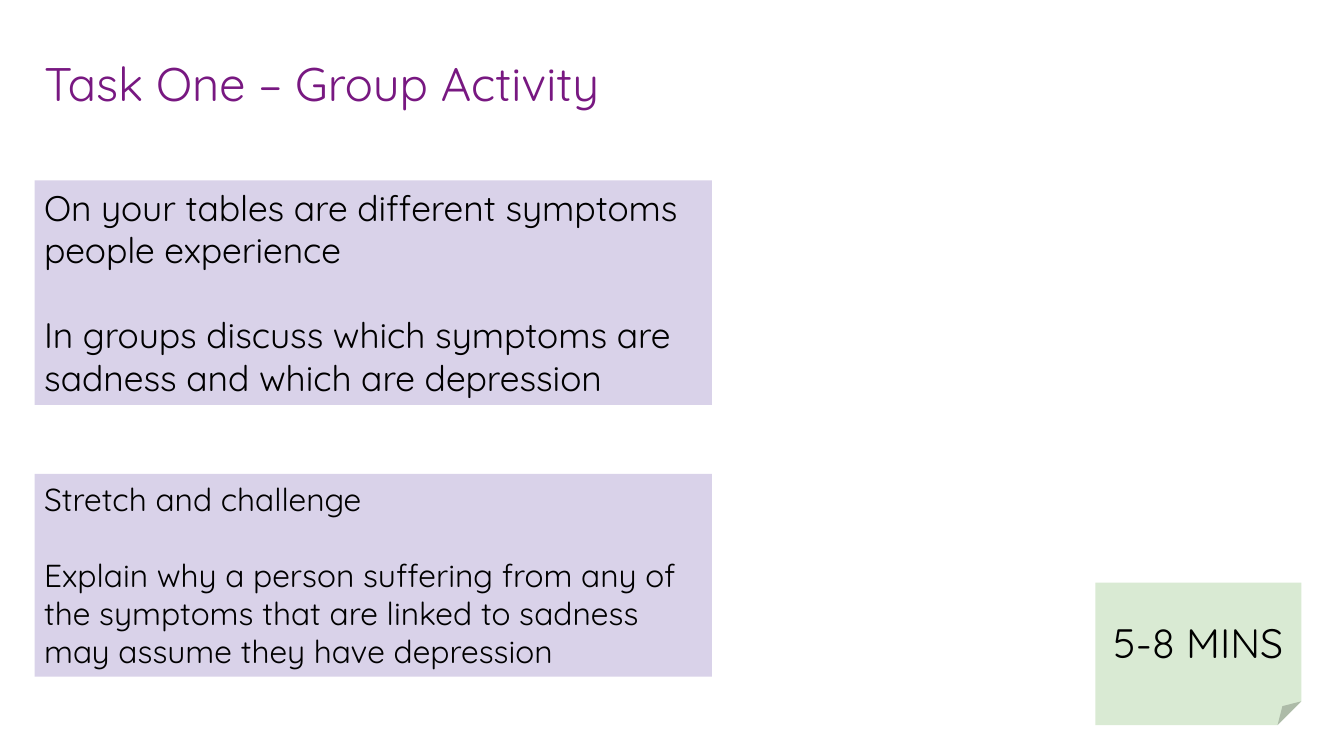
from dataclasses import dataclass

from pptx import Presentation
from pptx.dml.color import RGBColor
from pptx.enum.shapes import MSO_SHAPE
from pptx.enum.text import MSO_ANCHOR, PP_ALIGN
from pptx.shapes.autoshape import Shape
from pptx.slide import Slide
from pptx.util import Inches, Pt

RECTANGLE = MSO_SHAPE.RECTANGLE
FOLDED_CORNER = MSO_SHAPE.FOLDED_CORNER
TOP, MIDDLE = MSO_ANCHOR.TOP, MSO_ANCHOR.MIDDLE
LEFT, CENTER = PP_ALIGN.LEFT, PP_ALIGN.CENTER
SLIDE_WIDTH = Inches(10)
SLIDE_HEIGHT = SLIDE_WIDTH * 9 // 16


@dataclass(frozen=True)
class Theme:
    font: str = "Quicksand"
    title: RGBColor = RGBColor(0x78, 0x18, 0x81)
    ink: RGBColor = RGBColor(0, 0, 0)
    panel: RGBColor = RGBColor(0xD9, 0xD2, 0xE9)
    note: RGBColor = RGBColor(0xD9, 0xEA, 0xD3)
    title_size: float = 25.2
    task_size: float = 19
    stretch_size: float = 17
    note_size: float = 22
    line_height: float = 1.2
    inset_x: float = 0.07
    inset_y: float = 0.04


THEME = Theme()


@dataclass(frozen=True)
class PercentArea:
    left: float
    top: float
    width: float
    height: float

    def lengths(self) -> tuple[int, int, int, int]:
        return (
            int(SLIDE_WIDTH * self.left / 100),
            int(SLIDE_HEIGHT * self.top / 100),
            int(SLIDE_WIDTH * self.width / 100),
            int(SLIDE_HEIGHT * self.height / 100),
        )


@dataclass(frozen=True)
class Panel:
    area: PercentArea
    paragraphs: tuple[str, ...]
    size: float
    fill: RGBColor


MARGIN = 2.58
PANEL_WIDTH = 50.4
TITLE_AREA = PercentArea(MARGIN, 6.45, 69.9, 8.36)

PANELS = (
    Panel(
        PercentArea(MARGIN, 23.86, PANEL_WIDTH, 29.7),
        (
            "On your tables are different symptoms people experience",
            "In groups discuss which symptoms are sadness and which are depression",
        ),
        THEME.task_size,
        THEME.panel,
    ),
    Panel(
        PercentArea(MARGIN, 62.7, PANEL_WIDTH, 26.8),
        (
            "Stretch and challenge",
            "Explain why a person suffering from any of the symptoms that are "
            "linked to sadness may assume they have depression",
        ),
        THEME.stretch_size,
        THEME.panel,
    ),
)

TIME_NOTE = Panel(
    PercentArea(81.5, 77.08, 15.33, 18.84),
    ("5-8 MINS",),
    THEME.note_size,
    THEME.note,
)


def write_text(
    shape: Shape,
    paragraphs: tuple[str, ...],
    size: float,
    color: RGBColor,
    alignment: PP_ALIGN = LEFT,
    anchor: MSO_ANCHOR = TOP,
) -> None:
    frame = shape.text_frame
    frame.word_wrap = True
    frame.vertical_anchor = anchor
    frame.margin_left = frame.margin_right = Inches(THEME.inset_x)
    frame.margin_top = frame.margin_bottom = Inches(THEME.inset_y)
    frame.text = "\n".join(paragraphs)
    for index, paragraph in enumerate(frame.paragraphs):
        paragraph.alignment = alignment
        if index:
            paragraph.space_before = Pt(size * THEME.line_height)
        for run in paragraph.runs:
            run.font.name = THEME.font
            run.font.size = Pt(size)
            run.font.color.rgb = color


def add_panel(
    slide: Slide,
    panel: Panel,
    kind: MSO_SHAPE = RECTANGLE,
    alignment: PP_ALIGN = LEFT,
    anchor: MSO_ANCHOR = TOP,
) -> None:
    shape = slide.shapes.add_shape(kind, *panel.area.lengths())
    shape.shadow.inherit = False
    shape.fill.solid()
    shape.fill.fore_color.rgb = panel.fill
    shape.line.fill.background()
    write_text(shape, panel.paragraphs, panel.size, THEME.ink, alignment, anchor)


def main() -> None:
    presentation = Presentation()
    presentation.slide_width = SLIDE_WIDTH
    presentation.slide_height = SLIDE_HEIGHT
    slide = presentation.slides.add_slide(presentation.slide_layouts[6])

    title = slide.shapes.add_textbox(*TITLE_AREA.lengths())
    write_text(title, ("Task One – Group Activity",), THEME.title_size, THEME.title)
    for panel in PANELS:
        add_panel(slide, panel)
    add_panel(slide, TIME_NOTE, FOLDED_CORNER, CENTER, MIDDLE)

    presentation.save("out.pptx")


if __name__ == "__main__":
    main()
